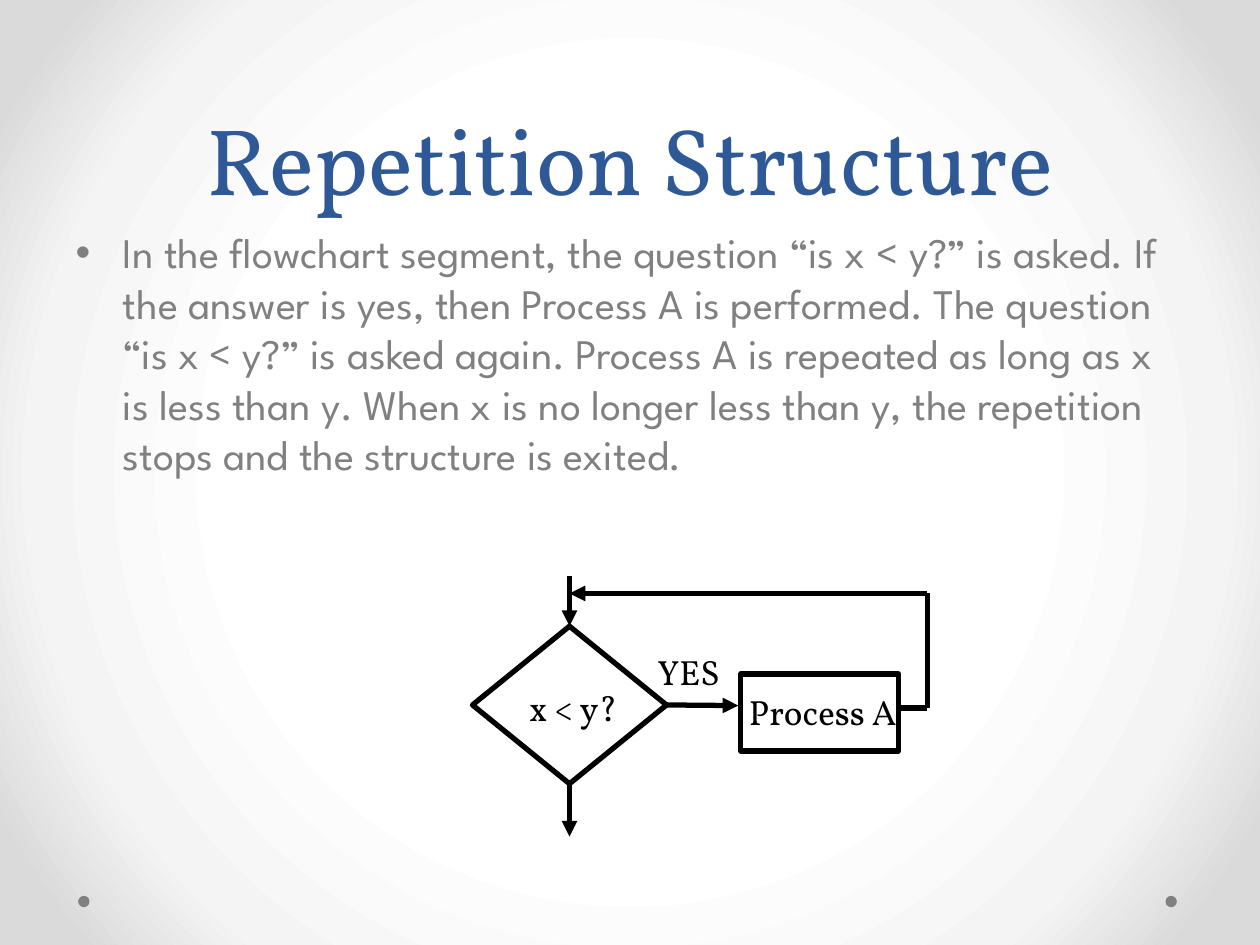
from lxml import etree
from pptx import Presentation
from pptx.dml.color import RGBColor
from pptx.enum.shapes import MSO_CONNECTOR, MSO_SHAPE
from pptx.enum.text import MSO_ANCHOR, MSO_AUTO_SIZE, PP_ALIGN
from pptx.oxml.ns import qn
from pptx.util import Inches, Pt

DIAMOND, RECT, OVAL = (MSO_SHAPE.FLOWCHART_DECISION, MSO_SHAPE.RECTANGLE,
                       MSO_SHAPE.OVAL)
LINE = MSO_CONNECTOR.STRAIGHT
CENTER, BOTTOM, TOP = PP_ALIGN.CENTER, MSO_ANCHOR.BOTTOM, MSO_ANCHOR.TOP
FIXED = MSO_AUTO_SIZE.NONE
SERIF, SANS = "Vollkorn", "League Spartan"
BLACK, GRAY, BLUE = "000000", "808080", "2F5897"

deck = Presentation()
deck.slide_width, deck.slide_height = Inches(10), Inches(7.5)
UNIT = deck.slide_width // 100  # square grid: 100 columns by 75 rows
slide = deck.slides.add_slide(deck.slide_layouts[1])


def grid(*cells):
    return [round(n * UNIT) for n in cells]


def write(shape, text, size, face, color):
    para = shape.text_frame.paragraphs[0]
    run = para.add_run()
    run.text = text
    for key, val in {"size": Pt(size), "name": face}.items():
        setattr(run.font, key, val)
    run.font.color.rgb = RGBColor.from_string(color)
    return para


# Background: circular gradient from the centre
fill = slide.background.fill
fill.gradient()
grad = slide.background._cSld.find(".//" + qn("a:gradFill"))
for part in list(grad):
    grad.remove(part)
stops = etree.SubElement(grad, qn("a:gsLst"))
for pos, tone in ((50, "FFFFFF"), (76, "F4F4F4"), (92, "DADADA")):
    stop = etree.SubElement(stops, qn("a:gs"), pos=str(pos * 1000))
    etree.SubElement(stop, qn("a:srgbClr"), val=tone)
ring = etree.SubElement(grad, qn("a:path"), path="circle")
etree.SubElement(ring, qn("a:fillToRect"), l="50000", t="50000",
                 r="50000", b="50000")

# Corner dots
for left in (6.2, 92.5):
    dot = slide.shapes.add_shape(OVAL, *grid(left, 71.1, 0.9, 0.9))
    dot.shadow.inherit = False
    dot.fill.solid()
    dot.fill.fore_color.rgb = RGBColor.from_string(GRAY)
    dot.line.fill.background()

# Title and body
title, body = slide.shapes.title, slide.placeholders[1]
for hold, top, high, anchor in ((title, 0, 17.5, BOTTOM),
                                (body, 17.5, 49.5, TOP)):
    hold.left, hold.top, hold.width, hold.height = grid(5, top, 90, high)
    hold.text_frame.vertical_anchor = anchor
    hold.text_frame.auto_size = FIXED
head = write(title, "Repetition Structure", 54, SERIF, BLUE)
head.alignment, head.line_spacing = CENTER, Pt(58)
write(body, "In the flowchart segment, the question “is x < y?” is asked. "
      "If the answer is yes, then Process A is performed. The question "
      "“is x < y?” is asked again. Process A is repeated as long as x is "
      "less than y. When x is no longer less than y, the repetition stops "
      "and the structure is exited.", 24, SANS, GRAY)

# Flowchart nodes
chart = slide.shapes.add_group_shape().shapes
nodes = []
for kind, cells in ((DIAMOND, (37.5, 49.7, 15.4, 12.5)),
                    (RECT, (58.8, 53.5, 12.5, 6.1))):
    node = chart.add_shape(kind, *grid(*cells))
    node.shadow.inherit = False
    node.fill.background()
    node.line.color.rgb = RGBColor.from_string(BLACK)
    node.line.width = Pt(3)
    nodes.append(node)
test = nodes[0]

# Flow lines: ends, arrowhead, side of the test joined at start and at end
AXIS, LOOP, BACK = 45.2, 73.6, 47.1
flows = (
    ((AXIS, 62.2, AXIS, 66.4), True, 2, None),
    ((52.9, 56, 58.6, 56), True, 3, None),
    ((AXIS, 45.7, AXIS, 49.7), True, None, 0),
    ((71.2, 56.2, LOOP, 56.2), False, None, None),
    ((LOOP, 56.2, LOOP, BACK), False, None, None),
    ((LOOP, BACK, AXIS, BACK), True, None, None),
)
for ends, arrow, start, stop in flows:
    flow = chart.add_connector(LINE, *grid(*ends))
    if start is not None:
        flow.begin_connect(test, start)
    if stop is not None:
        flow.end_connect(test, stop)
    flow.line.color.rgb = RGBColor.from_string(BLACK)
    flow.line.width = Pt(3)
    if arrow:
        etree.SubElement(flow.line._get_or_add_ln(), qn("a:tailEnd"),
                         type="triangle")
    etree.SubElement(flow._element.spPr, qn("a:effectLst"))

# Labels
for text, cells in (("x < y?", (40.3, 54, 10.4, 4.3)),
                    ("Process A", (58.2, 54.3, 14.2, 4.3)),
                    ("YES", (50.4, 51.1, 8.5, 4.3))):
    label = chart.add_textbox(*grid(*cells))
    label.text_frame.word_wrap = True
    write(label, text, 20, SERIF, BLACK).alignment = CENTER

deck.save("out.pptx")
